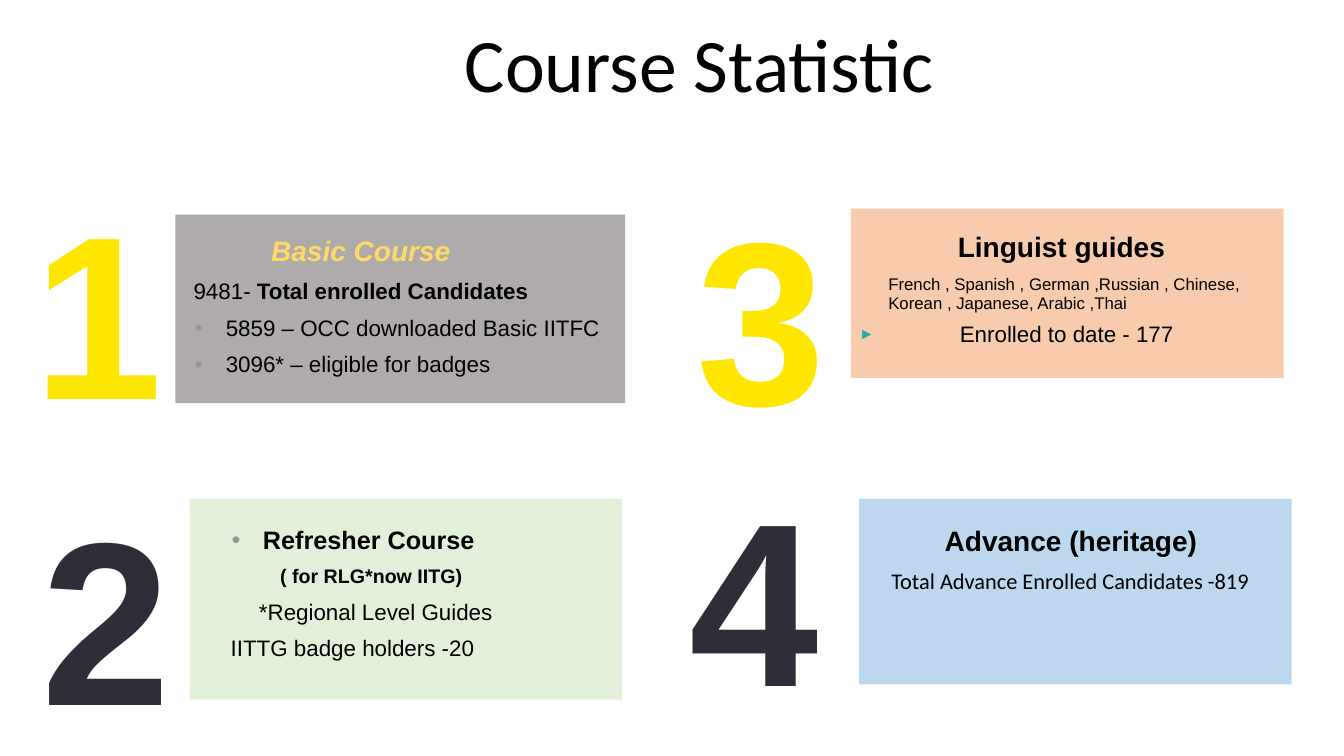
from lxml.etree import SubElement
from pptx import Presentation
from pptx.dml.color import RGBColor
from pptx.enum.shapes import MSO_SHAPE as Shape
from pptx.enum.text import MSO_ANCHOR as Anchor, MSO_AUTO_SIZE as AutoSize, PP_ALIGN as Align
from pptx.oxml.ns import qn
from pptx.util import Inches, Pt

COLORS = {
    "black": "000000", "yellow": "FFE600", "dark": "2E2E38", "gold": "FFD966",
    "gray": "AFABAB", "green": "E2F0D9", "peach": "F8CBAD", "blue": "BDD7EE",
    "bullet": "969696", "teal": "27ACAA",
}
TITLE = ("Course Statistic", (3.07, 0.12, 7.73, 1.01))
PANELS = [
    ("blue", (8.52, 4.95, 4.29, 1.84)),
    ("green", (1.88, 4.95, 4.29, 1.99)),
    ("peach", (8.44, 2.07, 4.29, 1.68)),
    ("gray", (1.74, 2.13, 4.46, 1.87)),
]
NUMBERS = [
    ("1", "yellow", (0.33, 2.07, 1.22, 2.37), True),
    ("2", "dark", (0.41, 5.11, 1.26, 2.37), True),
    ("3", "yellow", (6.9, 2.13, 1.3, 2.37), False),
    ("4", "dark", (6.83, 4.92, 1.3, 2.37), False),
]
DOT = {"left": 0.61, "hang": 0.31, "bullet": ("•", "bullet", 100)}
ARROW = {"left": 1, "hang": 1, "bullet": ("►", "teal", 70), "spacing": 0.85, "after": 6}
COURSES = [
    ((1.63, 2.3, 4.57, 1.46), 0, None, [
        ("Basic Course", {"size": 20, "bold": True, "italic": True, "color": "gold", "left": 1.06}),
        ([("9481- ", False), ("Total enrolled Candidates", True)], {"left": 0.29}),
        ("5859 – OCC downloaded Basic IITFC", DOT),
        ("3096* – eligible for badges", DOT),
    ]),
    ((8.44, 5.18, 4.57, 1.16), 0, None, [
        ("Advance (heritage)", {"size": 20, "bold": True, "left": 0.93}),
        ("Total Advance Enrolled Candidates -819", {"font": "Calibri", "left": 0.4}),
    ]),
    ((8.52, 2.26, 4.12, 1.2), 0, "peach", [
        ("Linguist guides", {"size": 20, "bold": True, "left": 0.98}),
        ("French , Spanish , German ,Russian , Chinese, Korean , Japanese, Arabic ,Thai",
         {"size": 12, "left": 0.29}),
        ("Enrolled to date - 177", ARROW),
    ]),
    ((1.9, 5.18, 4.32, 1.46), 0.1, None, [
        ("Refresher Course", {"size": 18, "bold": True, **DOT}),
        ("( for RLG*now IITG)", {"size": 14, "bold": True, "left": 0.78}),
        ("*Regional Level Guides", {"left": 0.57}),
        ("IITTG badge holders -20", {"left": 0.29}),
    ]),
]


def rgb(name):
    return RGBColor.from_string(COLORS[name])


def add_bullet(pPr, char, color, percent):
    clr = SubElement(pPr, qn("a:buClr"))
    SubElement(clr, qn("a:srgbClr"), val=COLORS[color])
    SubElement(pPr, qn("a:buSzPct"), val=str(percent * 1000))
    SubElement(pPr, qn("a:buFont"), typeface="Arial")
    SubElement(pPr, qn("a:buChar"), char=char)


def add_text(p, text, size=16, bold=False, italic=False, color="black", font="Arial",
             align=Align.LEFT, left=0, hang=0, bullet=None, spacing=0.95, after=8):
    pPr = p._p.get_or_add_pPr()
    pPr.set("marL", str(Inches(left)))
    pPr.set("indent", str(-Inches(hang)))
    if bullet:
        add_bullet(pPr, *bullet)
    p.alignment = align
    p.line_spacing = spacing
    p.space_before = Pt(0)
    p.space_after = Pt(after)
    for part, part_bold in [(text, bold)] if isinstance(text, str) else text:
        r = p.add_run()
        r.text = part
        f = r.font
        f.name, f.size, f.bold, f.italic = font, Pt(size), part_bold, italic
        f.color.rgb = rgb(color)


def set_frame(sp, side=0.0, top=0.0, anchor=Anchor.TOP, wrap=True, fit=AutoSize.SHAPE_TO_FIT_TEXT):
    tf = sp.text_frame
    tf.word_wrap, tf.auto_size, tf.vertical_anchor = wrap, fit, anchor
    tf.margin_left = tf.margin_right = Inches(side)
    tf.margin_top = tf.margin_bottom = Inches(top)
    return tf


def add_panel(slide, color, box):
    sp = slide.shapes.add_shape(Shape.RECTANGLE, *map(Inches, box))
    sp.shadow.inherit = False
    sp.fill.solid()
    sp.fill.fore_color.rgb = rgb(color)
    sp.line.fill.background()
    return sp


def main():
    prs = Presentation()
    prs.slide_width, prs.slide_height = Inches(13.33), Inches(7.5)
    slide = prs.slides.add_slide(prs.slide_layouts[5])

    text, box = TITLE
    title = slide.shapes.title
    title.left, title.top, title.width, title.height = map(Inches, box)
    tf = set_frame(title, side=0.1, top=0.05, fit=AutoSize.NONE)
    add_text(tf.paragraphs[0], text, size=54, font="Calibri", align=Align.CENTER,
             spacing=1.0, after=0)

    for color, box in PANELS:
        add_panel(slide, color, box)

    for digit, color, box, wrap in NUMBERS:
        sp = slide.shapes.add_textbox(*map(Inches, box))
        tf = set_frame(sp, anchor=Anchor.MIDDLE, wrap=wrap)
        add_text(tf.paragraphs[0], digit, size=166, bold=True, color=color,
                 align=Align.CENTER, spacing=0.85, after=6)

    for box, side, fill, lines in COURSES:
        sp = add_panel(slide, fill, box) if fill else slide.shapes.add_textbox(*map(Inches, box))
        tf = set_frame(sp, side=side, top=0.04)
        for i, (text, style) in enumerate(lines):
            p = tf.add_paragraph() if i else tf.paragraphs[0]
            add_text(p, text, **style)

    prs.save("out.pptx")


if __name__ == "__main__":
    main()
